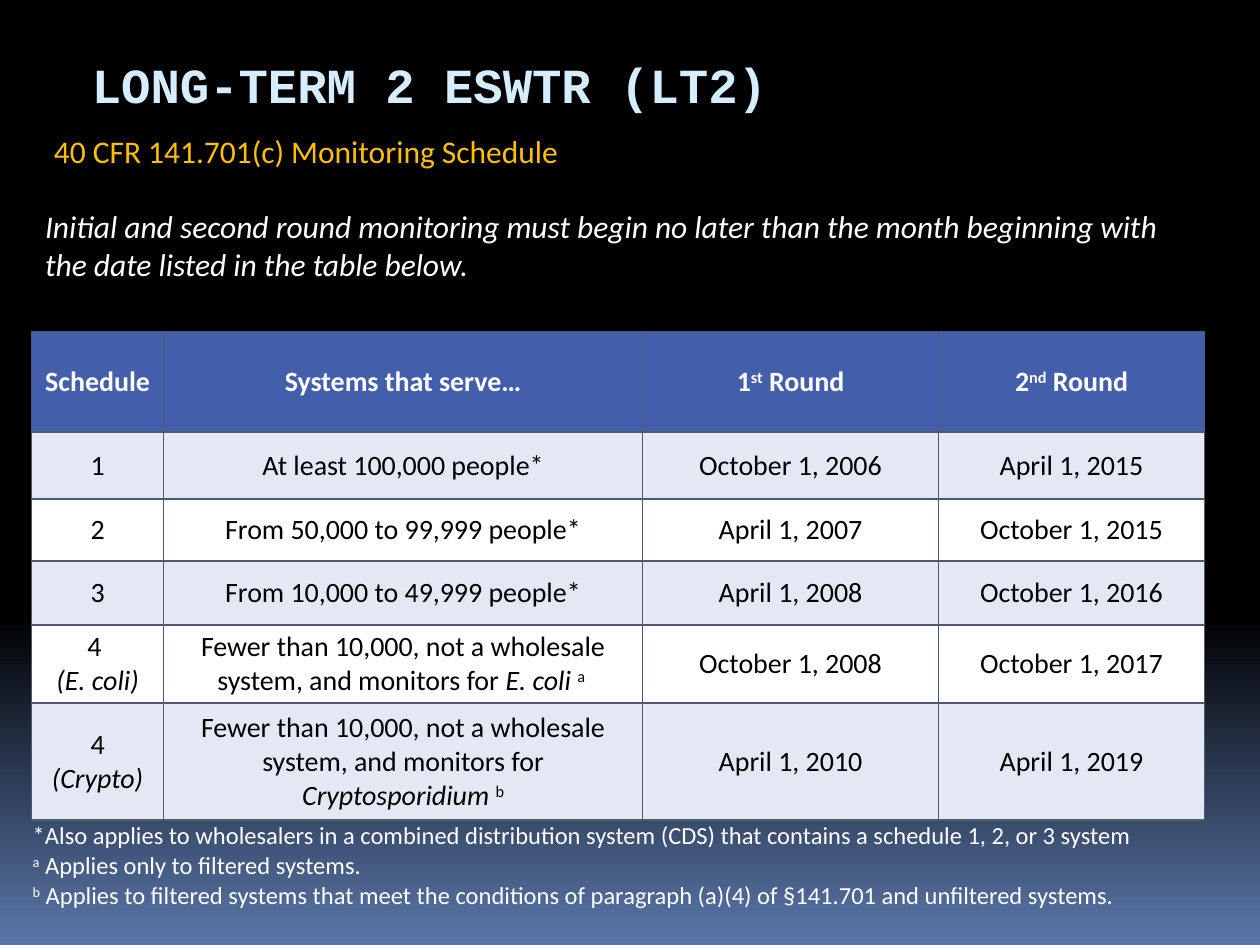
import copy

import pptx
import pptx.dml.color
import pptx.enum.text
import pptx.oxml
import pptx.oxml.ns
import pptx.util

Pt = pptx.util.Pt
ALIGN = pptx.enum.text.PP_ALIGN
ANCHOR = pptx.enum.text.MSO_ANCHOR
NO_GRID_STYLE = "{2D5ABB26-0587-4C30-8999-92F81FD0307C}"
BORDER = "4E5B6F"

COLUMNS = [75.6, 273.6, 169.2, 151.9]
ROWS = [35.3, 57.6, 38.2, 35.3, 36.7, 44.6, 67, 51.1]
HEADER = ["Schedule", "Systems that serve…", "1^st^ Round", "2^nd^ Round"]
SCHEDULES = [
    ["1", "At least 100,000 people*", "October 1, 2006", "April 1, 2015"],
    ["2", "From 50,000 to 99,999 people*", "April 1, 2007", "October 1, 2015"],
    ["3", "From 10,000 to 49,999 people*", "April 1, 2008", "October 1, 2016"],
    ["4 \n_(E. coli)_",
     "Fewer than 10,000, not a wholesale system, and monitors for _E. coli\u00a0_^a ^",
     "October 1, 2008", "October 1, 2017"],
    ["4\n_(Crypto)_",
     "Fewer than 10,000, not a wholesale system, and monitors for _Cryptosporidium\u00a0_^b^",
     "April 1, 2010", "April 1, 2019"],
]
FOOTNOTES = (
    "*Also applies to wholesalers in a combined distribution system (CDS) "
    "that contains a schedule 1, 2, or 3 system\n"
    "^a^\u00a0Applies only to filtered systems.\n"
    "^b^\u00a0Applies to filtered systems that meet the conditions of "
    "paragraph (a)(4) of §141.701 and unfiltered systems."
)


def rgb(value):
    return pptx.dml.color.RGBColor.from_string(value)


def add_text(tf, text, size, color, font="Calibri", bold=False,
             align=ALIGN.LEFT, before=0):
    """Write one paragraph per line; _text_ is italic and ^text^ superscript."""
    for line in text.split("\n"):
        p = tf.paragraphs[0]
        if p.runs:
            p = tf.add_paragraph()
        p.alignment = align
        p.space_before = Pt(before)
        for i, level in enumerate(line.split("^")):
            for j, part in enumerate(level.split("_")):
                if not part:
                    continue
                r = p.add_run()
                r.text = part
                r.font.name = font
                r.font.size = Pt(size)
                r.font.bold = bold
                r.font.italic = j % 2 == 1
                r.font.color.rgb = rgb(color)
                if i % 2:
                    r.font._element.set("baseline", "30000")
    return p


def add_box(s, left, top, width, height):
    tf = s.shapes.add_textbox(Pt(left), Pt(top), Pt(width), Pt(height)).text_frame
    tf.word_wrap = True
    return tf


def add_background(s):
    fill = s.background.fill
    fill.gradient()
    fill.gradient_angle = 270
    stops = s.element.xpath(".//a:gsLst")[0]
    stops.append(copy.deepcopy(stops[-1]))
    colors = [(0, "000000"), (0.65, "000000"), (1, "5A77A9")]
    for stop, (position, color) in zip(fill.gradient_stops, colors):
        stop.position = position
        stop.color.rgb = rgb(color)


def add_title(s, left, top, width, height):
    tf = add_box(s, left, top, width, height)
    tf.margin_top = Pt(10)
    tf.margin_bottom = 0
    add_text(tf, "LONG-TERM 2 ESWTR (LT2)", 28, "D6ECFF", "Courier New", bold=True)


def add_intro(s, left, top, width, height):
    tf = add_box(s, left, top, width, height)
    p = add_text(tf, "40 CFR 141.701(c) Monitoring Schedule", 18, "FFC000")
    props = p._p.get_or_add_pPr()
    props.set("marL", str(Pt(32.4)))
    props.set("indent", str(-Pt(27.4)))
    add_text(tf, "_Initial and second round monitoring must begin no later than the "
             "month beginning with the date listed in the table below._",
             18, "FFFFFF", before=21)


def add_borders(cell, sides):
    props = cell._tc.get_or_add_tcPr()
    for side in sides:
        props.append(pptx.oxml.parse_xml(
            f'<a:ln{side} {pptx.oxml.ns.nsdecls("a")} w="{Pt(1)}"><a:solidFill>'
            f'<a:srgbClr val="{BORDER}"/></a:solidFill></a:ln{side}>'))


def fill_cell(cell, text, size, color, fill=None, anchor=ANCHOR.MIDDLE, **fmt):
    cell.margin_left = cell.margin_right = Pt(0.72)
    cell.margin_top = cell.margin_bottom = Pt(0.72)
    cell.vertical_anchor = anchor
    if fill:
        add_borders(cell, "LRTB")
        cell.fill.solid()
        cell.fill.fore_color.rgb = rgb(fill)
    add_text(cell.text_frame, text, size, color, **fmt)


def add_schedule(s, left, top):
    """Table with an open merged row above the header and one for footnotes."""
    last = len(ROWS) - 1
    table = s.shapes.add_table(len(ROWS), len(COLUMNS), Pt(left), Pt(top),
                               Pt(sum(COLUMNS)), Pt(sum(ROWS))).table
    table.first_row = table.horz_banding = False
    table._tbl.xpath(".//a:tableStyleId")[0].text = NO_GRID_STYLE
    for column, width in zip(table.columns, COLUMNS):
        column.width = Pt(width)
    for row, height in zip(table.rows, ROWS):
        row.height = Pt(height)
    for row, side in ((0, "B"), (last, "T")):
        for column in range(len(COLUMNS)):
            add_borders(table.cell(row, column), side)
        table.cell(row, 0).merge(table.cell(row, len(COLUMNS) - 1))

    for column, text in enumerate(HEADER):
        fill_cell(table.cell(1, column), text, 16, "FFFFFF", "435EAA",
                  bold=True, align=ALIGN.CENTER)
    for row, schedule in enumerate(SCHEDULES, start=2):
        fill = "FFFFFF" if row % 2 else "E3E8F4"
        for column, text in enumerate(schedule):
            fill_cell(table.cell(row, column), text, 16, "000000", fill,
                      align=ALIGN.CENTER)
    fill_cell(table.cell(last, 0), FOOTNOTES, 14, "FFFFFF", anchor=ANCHOR.TOP)


def main():
    prs = pptx.Presentation()
    prs.slide_width, prs.slide_height = Pt(720), Pt(540)
    s = prs.slides.add_slide(prs.slide_layouts[6])
    add_background(s)
    add_title(s, 45.4, 20.9, 656.6, 41)
    add_intro(s, 18.7, 72, 665.3, 143.3)
    add_schedule(s, 18, 154.1)
    prs.save("out.pptx")


if __name__ == "__main__":
    main()
